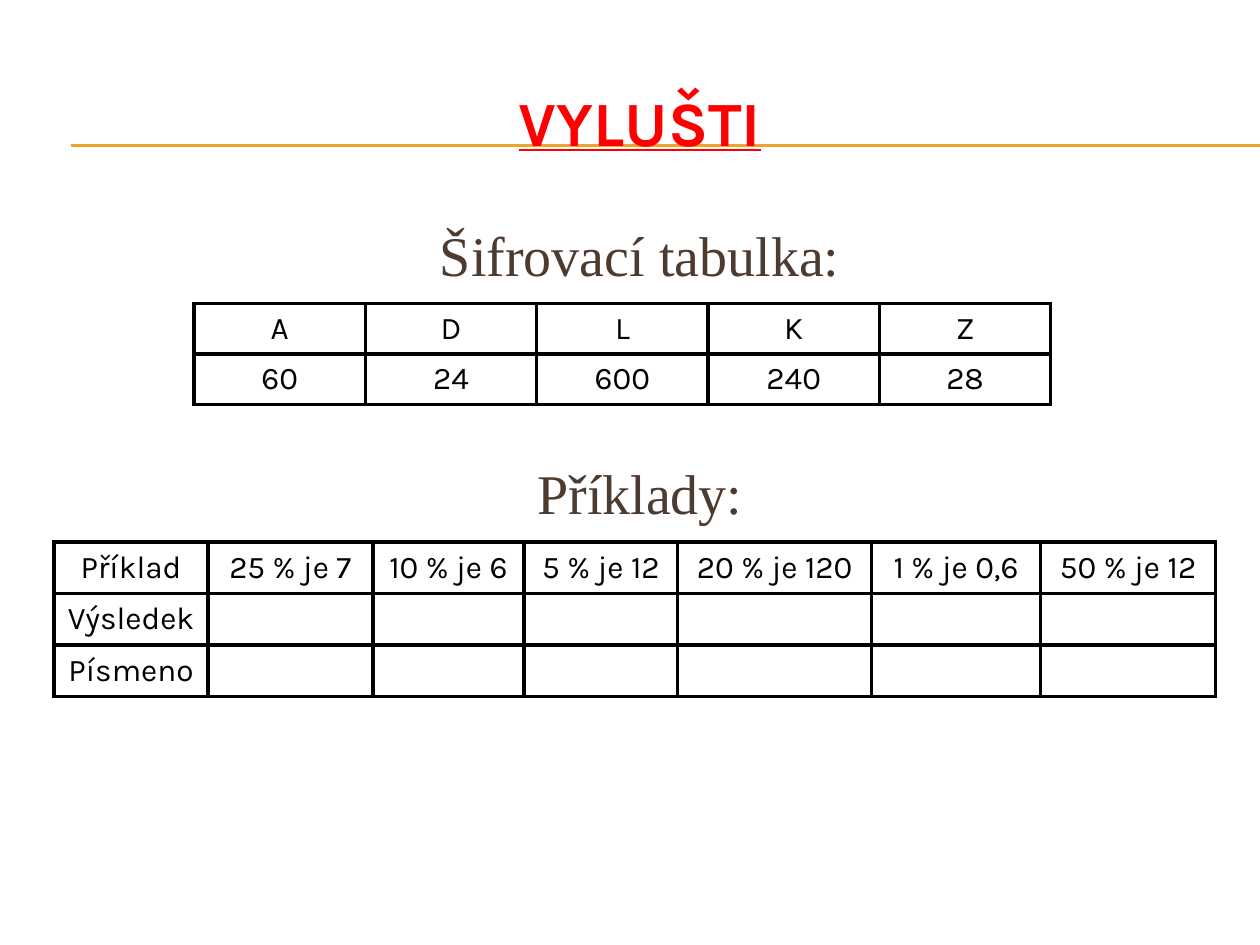
from lxml.etree import SubElement
from pptx import Presentation
from pptx.dml.color import RGBColor
from pptx.enum.shapes import MSO_CONNECTOR
from pptx.enum.text import MSO_ANCHOR, PP_ALIGN
from pptx.oxml.ns import qn
from pptx.util import Inches, Pt

RED = RGBColor(0xFF, 0x00, 0x00)
BROWN = RGBColor(0x4E, 0x3B, 0x30)
GOLD = RGBColor(0xF0, 0xA2, 0x2E)
BLACK = RGBColor(0x00, 0x00, 0x00)


def style_paragraph(paragraph, text, font_name, size, color):
    paragraph.text = text
    paragraph.alignment = PP_ALIGN.CENTER
    paragraph.font.name = font_name
    paragraph.font.size = Pt(size)
    paragraph.font.color.rgb = color


def add_grid(page, left, top, widths, row_height, rows):
    """Add an unfilled table with black borders and centred text."""
    frame = page.shapes.add_table(
        len(rows), len(widths), Inches(left), Inches(top),
        Inches(sum(widths)), Inches(row_height * len(rows)))
    table = frame.table
    table.first_row = table.horz_banding = False
    for column, width in zip(table.columns, widths):
        column.width = Inches(width)
    for row_index, row in enumerate(rows):
        for column_index, text in enumerate(row):
            cell = table.cell(row_index, column_index)
            cell.vertical_anchor = MSO_ANCHOR.MIDDLE
            style_paragraph(cell.text_frame.paragraphs[0], text, "Karla", 18, BLACK)
            properties = cell._tc.get_or_add_tcPr()
            for side in ("a:lnL", "a:lnR", "a:lnT", "a:lnB"):
                border = SubElement(properties, qn(side), w=str(Pt(2.25)))
                fill = SubElement(border, qn("a:solidFill"))
                SubElement(fill, qn("a:srgbClr"), val=str(BLACK))
            cell.fill.background()


deck = Presentation()
deck.slide_width, deck.slide_height = Inches(10), Inches(7.5)
page = deck.slides.add_slide(deck.slide_layouts[6])

for y in (1.15, 1.16):
    rule = page.shapes.add_connector(
        MSO_CONNECTOR.STRAIGHT, Inches(0.56), Inches(y), Inches(10), Inches(y))
    rule.line.color.rgb = GOLD
    rule.line.width = Pt(0.75)
    SubElement(rule._element.spPr, qn("a:effectLst"))

title_box = page.shapes.add_textbox(Inches(0.33), Inches(0.5), Inches(9.5), Inches(0.92))
title_box.text_frame.word_wrap = True
title_box.text_frame.vertical_anchor = MSO_ANCHOR.MIDDLE
title = title_box.text_frame.paragraphs[0]
style_paragraph(title, "VYLUŠTI", "Karla", 36, RED)
title.font.bold = title.font.underline = True

heading_box = page.shapes.add_textbox(Inches(0.33), Inches(1.7), Inches(9.5), Inches(4.95))
headings = heading_box.text_frame
headings.word_wrap = True
cipher_heading = headings.paragraphs[0]
task_heading = headings.add_paragraph()
for heading, text, space in ((cipher_heading, "Šifrovací tabulka:", 4),
                             (task_heading, "Příklady:", 97.5)):
    style_paragraph(heading, text, "Times New Roman", 32, BROWN)
    heading.space_before = Pt(space)

cipher = {"A": "60", "D": "24", "L": "600", "K": "240", "Z": "28"}
add_grid(page, 1.54, 2.41, [1.36] * 5, 0.39, [list(cipher), list(cipher.values())])

tasks = ["25 % je 7", "10 % je 6", "5 % je 12", "20 % je 120", "1 % je 0,6", "50 % je 12"]
blanks = [""] * len(tasks)
add_grid(page, 0.43, 4.3, [1.22, 1.31, 1.2, 1.22, 1.54, 1.34, 1.39], 0.41,
         [["Příklad"] + tasks, ["Výsledek"] + blanks, ["Písmeno"] + blanks])

deck.save("out.pptx")
